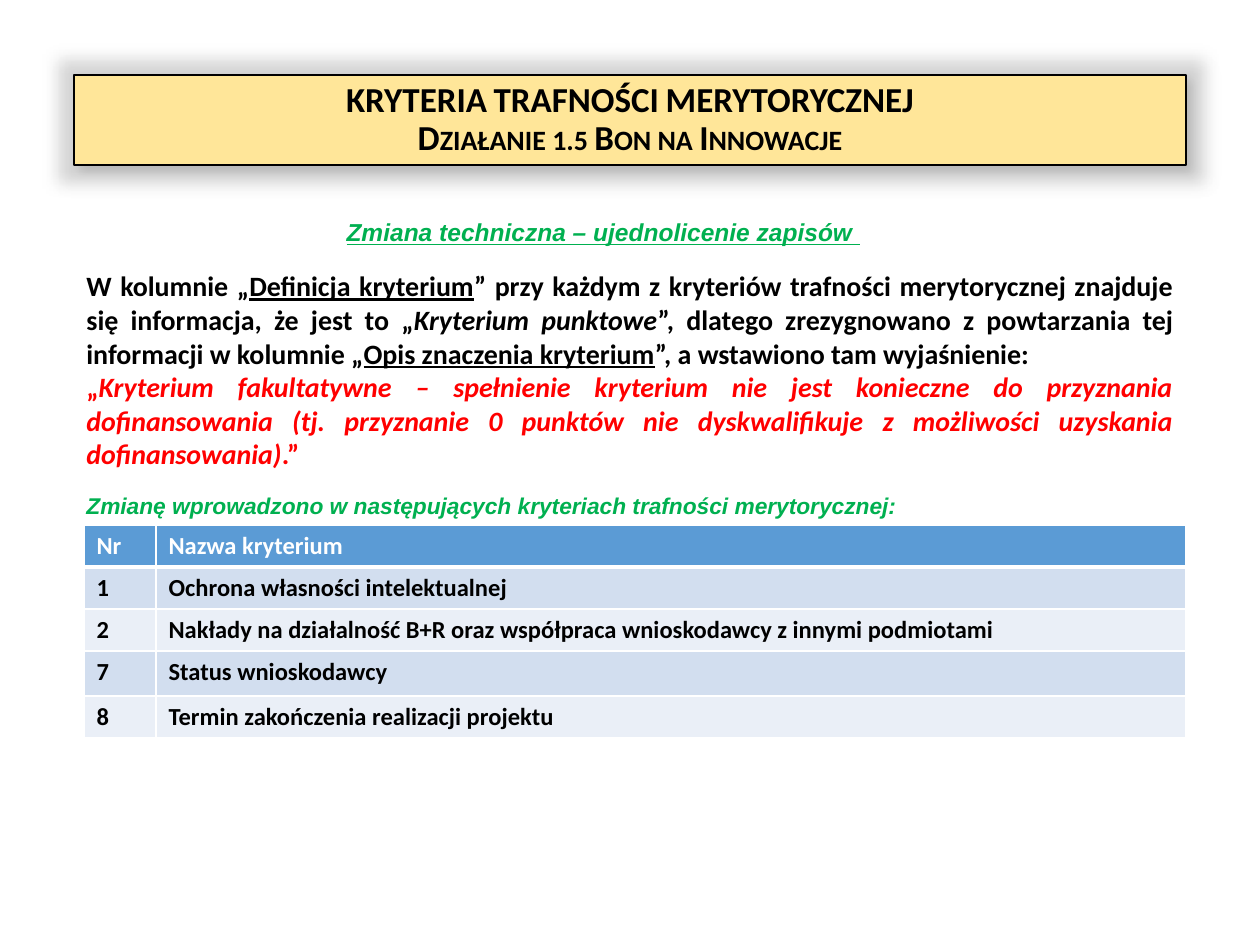
from lxml.etree import SubElement
from pptx import Presentation
from pptx.dml.color import RGBColor
from pptx.enum.text import MSO_ANCHOR, MSO_AUTO_SIZE, PP_ALIGN
from pptx.oxml import parse_xml
from pptx.oxml.ns import nsdecls, qn
from pptx.util import Pt

EMU_PER_PX = 914400 / 126
COLORS = {
    "black": "000000", "white": "FFFFFF", "red": "FF0000", "green": "00B050",
    "banner": "FFE699", "header": "5B9BD5", "odd": "D2DEEF", "even": "EAEFF7",
}
TITLE = ["KRYTERIA TRAFNOŚCI MERYTORYCZNEJ", "Działanie 1.5 Bon na Innowacje"]
PLAIN = ("Calibri", 16, "black", "")
UNDERLINED = ("Calibri", 16, "black", "u")
RED = ("Calibri", 16, "red", "")
PARAGRAPHS = [
    (PP_ALIGN.CENTER, 0, 12, [
        ("Zmiana techniczna – ujednolicenie zapisów ", ("Arial", 14, "green", "iu")),
        ("\t", ("Calibri", 18, "black", "")),
    ]),
    (PP_ALIGN.JUSTIFY, 0, 0, [
        ("W kolumnie „", PLAIN),
        ("Definicja kryterium", UNDERLINED),
        ("” przy każdym z kryteriów trafności merytorycznej znajduje się "
         "informacja, że jest to „", PLAIN),
        ("Kryterium punktowe", ("Calibri", 16, "black", "i")),
        ("”, dlatego zrezygnowano z powtarzania tej informacji w kolumnie „", PLAIN),
        ("Opis znaczenia kryterium", UNDERLINED),
        ("”, a wstawiono tam wyjaśnienie:", PLAIN),
    ]),
    (PP_ALIGN.JUSTIFY, 0, 0, [
        ("„", RED),
        ("Kryterium fakultatywne – spełnienie kryterium nie jest konieczne do "
         "przyznania dofinansowania (tj. przyznanie 0 punktów nie dyskwalifikuje "
         "z możliwości uzyskania dofinansowania)", ("Calibri", 16, "red", "i")),
        (".”", RED),
    ]),
    (PP_ALIGN.JUSTIFY, 12, 0, [
        ("Zmianę wprowadzono w następujących kryteriach trafności merytorycznej:",
         ("Arial", 13, "green", "i")),
    ]),
]
CRITERIA = [
    ("Nr", "Nazwa kryterium"),
    ("1", "Ochrona własności intelektualnej"),
    ("2", "Nakłady na działalność B+R oraz współpraca wnioskodawcy z innymi podmiotami"),
    ("7", "Status wnioskodawcy"),
    ("8", "Termin zakończenia realizacji projektu"),
]


def px(length):
    """Turn pixels into EMU."""
    return round(length * EMU_PER_PX)


def color(name):
    """Look up a named colour."""
    return RGBColor.from_string(COLORS[name])


def style_span(span, family, size, shade, marks=""):
    """Format one bold run; marks may hold i for italic and u for underline."""
    font = span.font
    font.name, font.size, font.bold = family, Pt(size), True
    font.italic, font.underline = "i" in marks, "u" in marks
    font.color.rgb = color(shade)


def add_banner(page, box):
    """Place the title in a framed banner with a soft grey halo."""
    title = page.shapes.title
    title.left, title.top, title.width, title.height = map(px, box)
    title.fill.solid()
    title.fill.fore_color.rgb = color("banner")
    title.line.color.rgb = color("black")
    title.line.width = Pt(0.75)
    title._element.spPr.append(parse_xml(
        f'<a:effectLst {nsdecls("a")}>'
        '<a:glow rad="228600"><a:srgbClr val="000000"><a:alpha val="15000"/>'
        '</a:srgbClr></a:glow>'
        '<a:outerShdw blurRad="76200" dist="38100" dir="2700000">'
        '<a:srgbClr val="000000"><a:alpha val="15000"/></a:srgbClr></a:outerShdw>'
        '</a:effectLst>'))
    frame = title.text_frame
    frame.text = "\n".join(TITLE)
    frame.auto_size = MSO_AUTO_SIZE.NONE
    frame.vertical_anchor = MSO_ANCHOR.MIDDLE
    for para in frame.paragraphs:
        para.alignment = PP_ALIGN.CENTER
        para.line_spacing = 0.9
        for span in para.runs:
            style_span(span, "Calibri", 20, "black")
            span.font._element.set("cap", "small")


def add_explanation(page, box):
    """Write the paragraphs that explain the change."""
    frame = page.shapes.add_textbox(*map(px, box)).text_frame
    frame.word_wrap = True
    frame.auto_size = MSO_AUTO_SIZE.SHAPE_TO_FIT_TEXT
    for index, (alignment, before, after, spans) in enumerate(PARAGRAPHS):
        para = frame.add_paragraph() if index else frame.paragraphs[0]
        para.alignment = alignment
        para.space_before, para.space_after = Pt(before), Pt(after)
        for text, style in spans:
            span = para.add_run()
            span.text = text
            style_span(span, *style)


def style_cell(cell, fill, shade, bottom_width):
    """Fill a cell, format its text and draw white borders."""
    for span in cell.text_frame.paragraphs[0].runs:
        style_span(span, "Calibri", 14, shade)
    properties = cell._tc.get_or_add_tcPr()
    for side, width in (("L", 1), ("R", 1), ("T", 1), ("B", bottom_width)):
        line = SubElement(properties, qn(f"a:ln{side}"), w=str(Pt(width)))
        solid = SubElement(line, qn("a:solidFill"))
        SubElement(solid, qn("a:srgbClr"), val=COLORS["white"])
    cell.fill.solid()
    cell.fill.fore_color.rgb = color(fill)


def add_criteria(page, box, number_width, row_heights):
    """Add the table of changed criteria."""
    table = page.shapes.add_table(len(CRITERIA), 2, *map(px, box)).table
    table.columns[0].width = px(number_width)
    table.columns[1].width = px(box[2] - number_width)
    for index, (texts, height) in enumerate(zip(CRITERIA, row_heights)):
        table.rows[index].height = px(height)
        fill = ("odd" if index % 2 else "even") if index else "header"
        for cell, text in zip(table.rows[index].cells, texts):
            cell.text = text
            style_cell(cell, fill, "black" if index else "white",
                       1 if index in range(1, 5) else 3)
            if index == 1:
                top = cell._tc.tcPr.find(qn("a:lnT"))
                top.set("w", str(Pt(3)))


def main():
    """Build the deck."""
    deck = Presentation()
    deck.slide_width, deck.slide_height = px(1260), px(945)
    page = deck.slides.add_slide(deck.slide_layouts[5])
    add_banner(page, (74, 75, 1112, 90))
    add_explanation(page, (74, 204, 1112, 326))
    add_criteria(page, (84, 525, 1102, 213), 72, (42, 42, 42, 45, 42))
    deck.save("out.pptx")


if __name__ == "__main__":
    main()
